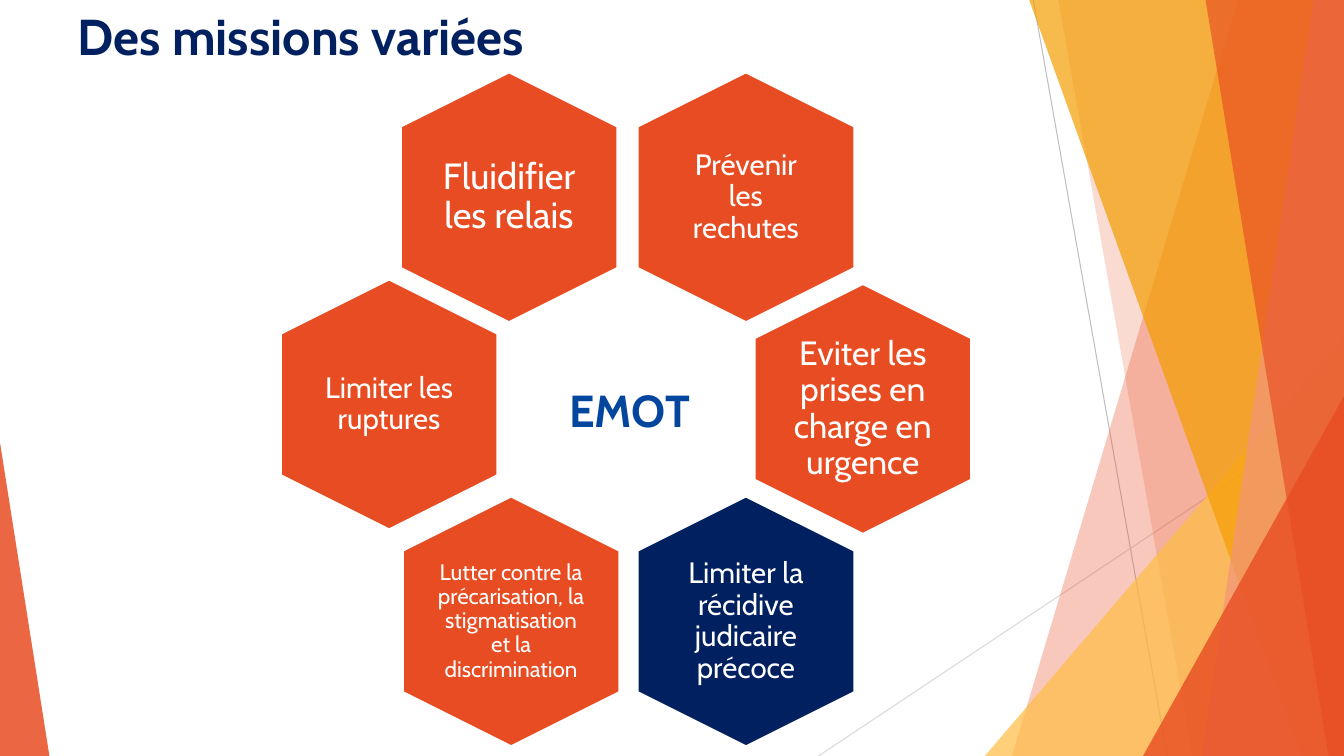
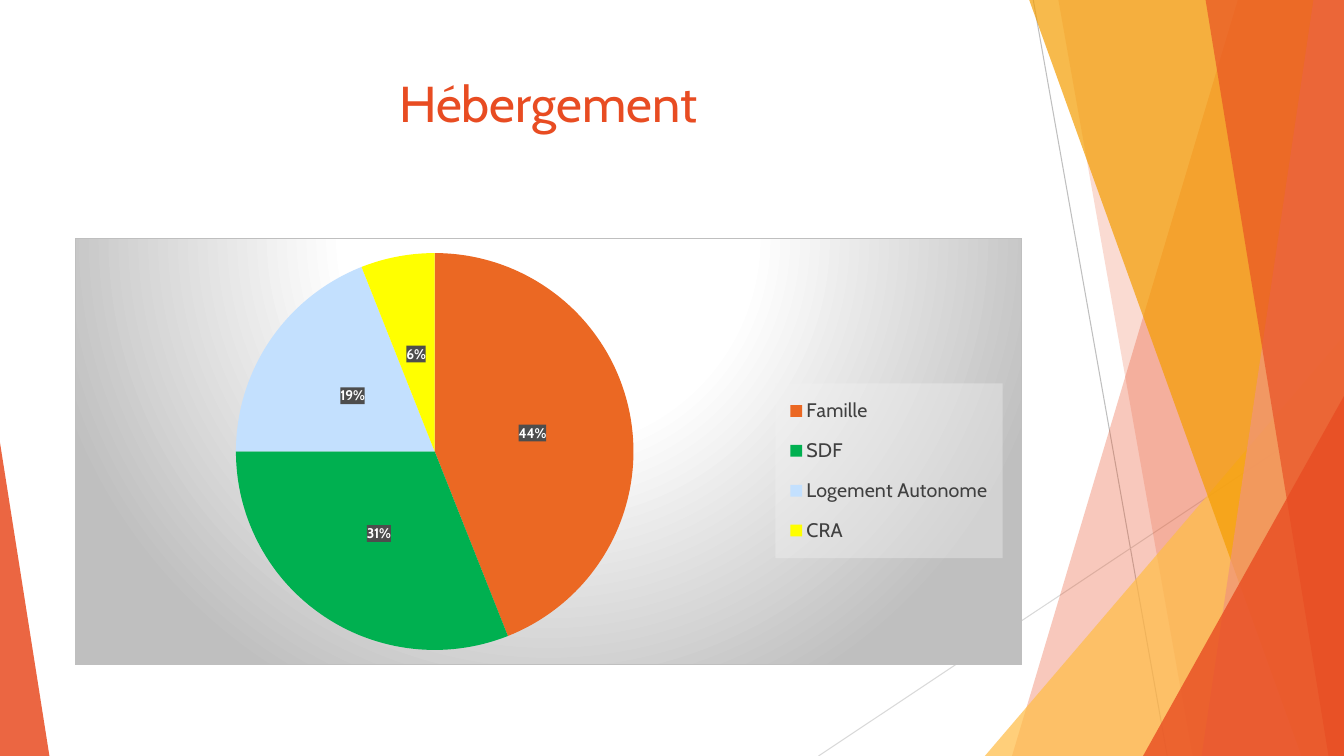
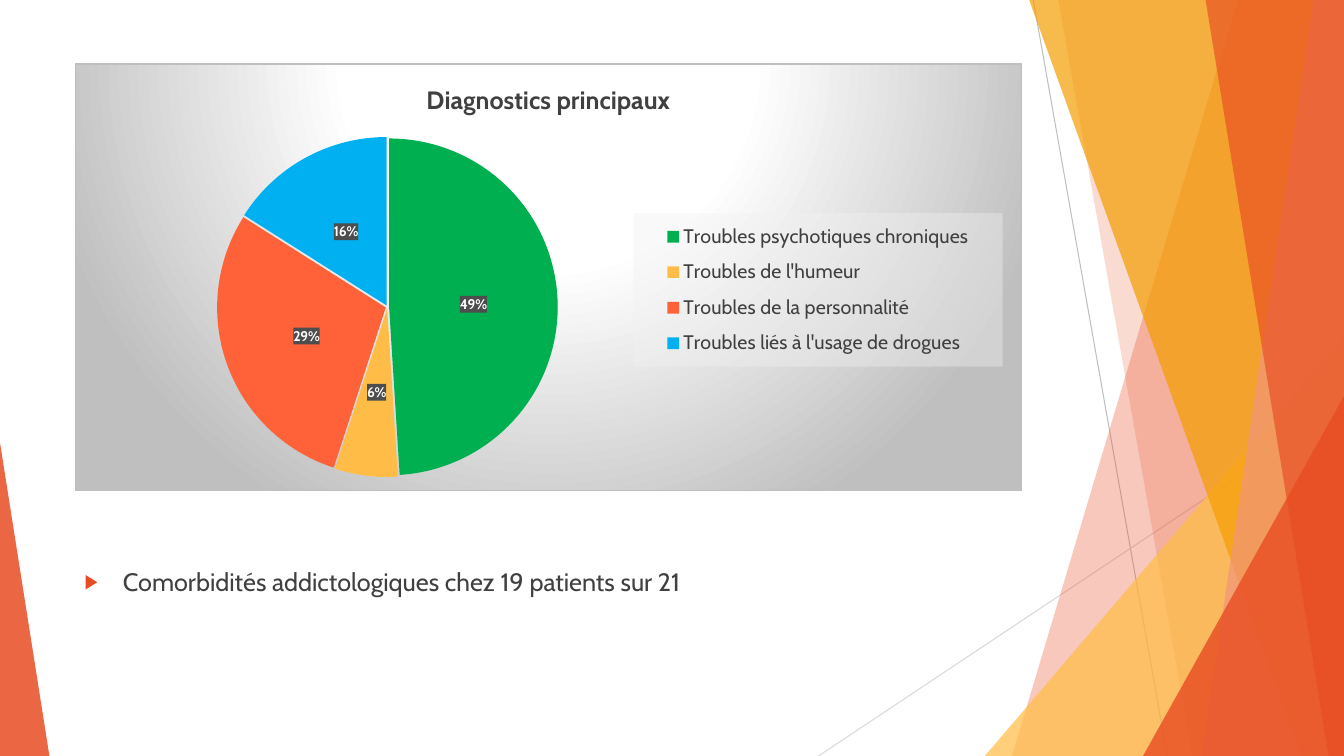
from dataclasses import dataclass

from lxml import etree
from pptx import Presentation
from pptx import util as u
from pptx.chart.data import CategoryChartData
from pptx.dml.color import RGBColor
from pptx.enum import chart as charts, shapes, text
from pptx.oxml import parse_xml
from pptx.oxml.ns import nsdecls, qn


@dataclass(frozen=True)
class Theme:
    font: str = "Cabin"
    white: str = "FFFFFF"
    black: str = "000000"
    ink: str = "404040"
    label: str = "4D4D4D"
    legend: str = "F2F2F2"
    silver: str = "BFBFBF"
    mist: str = "D9D9D9"
    orange: str = "E84C22"
    salmon: str = "F1947A"
    amber: str = "F49D00"
    gold: str = "FFBD47"
    navy: str = "002060"
    blue: str = "04459E"
    title_size: int = 36
    hub_size: int = 32
    body_size: int = 18
    legend_size: int = 14
    label_size: int = 10


THEME = Theme()
WIDTH, HEIGHT = u.Inches(13.33), u.Inches(7.5)
# Content column, on a grid of 100 columns by 100 rows
LEFT, SPAN = 5.55, 70.5


# Grid and formatting helpers
def column(count):
    return round(WIDTH * count / 100)


def row(count):
    return round(HEIGHT * count / 100)


def box(left, top, width, height):
    return column(left), row(top), column(width), row(height)


def centred_box(x, y, width, height):
    return box(x - width / 2, y - height / 2, width, height)


def rgb(value):
    return RGBColor.from_string(value)


def style_font(font, size, color, bold=False):
    font.name, font.size, font.bold = THEME.font, u.Pt(size), bold
    font.color.rgb = rgb(color)


def fill_shape(shape, color, opacity=100):
    shape.shadow.inherit = False
    shape.line.fill.background()
    shape.fill.solid()
    shape.fill.fore_color.rgb = rgb(color)
    if opacity < 100:
        color_node = shape.fill._xPr.find(".//" + qn("a:srgbClr"))
        etree.SubElement(color_node, qn("a:alpha"), val=str(opacity * 1000))


def write_text(shape, wording, size, color, bold=False, align=text.PP_ALIGN.LEFT,
               anchor=text.MSO_ANCHOR.TOP):
    frame = shape.text_frame
    frame.word_wrap = True
    frame.auto_size = text.MSO_AUTO_SIZE.NONE
    frame.vertical_anchor = anchor
    frame.text = wording
    paragraph = frame.paragraphs[0]
    paragraph.alignment = align
    style_font(paragraph.font, size, color, bold)
    return paragraph


def place(shape, left, top, width, height):
    shape.left, shape.top, shape.width, shape.height = box(left, top, width, height)


def add_title(slide, wording, left, top, color, **style):
    place(slide.shapes.title, left, top, SPAN, 19.2)
    write_text(slide.shapes.title, wording, THEME.title_size, color, **style)


# Decoration shared by all slides
def add_hairline(slide, start, end, color):
    line = slide.shapes.add_connector(
        shapes.MSO_CONNECTOR.STRAIGHT,
        column(start[0]), row(start[1]), column(end[0]), row(end[1]))
    line.line.color.rgb = rgb(color)
    line.line.width = u.Pt(0.75)
    etree.SubElement(line._element.spPr, qn("a:effectLst"))


def add_slab(slide, top_x, bottom_x, color, opacity):
    """Full-height band with a slanted left edge and the slide's right edge."""
    builder = slide.shapes.build_freeform(column(top_x), 0, scale=1.0)
    builder.add_line_segments(
        [(WIDTH, 0), (WIDTH, HEIGHT), (column(bottom_x), HEIGHT)], close=True)
    fill_shape(builder.convert_to_shape(), color, opacity)


def add_corner(slide, left, right, top, peak, color, opacity):
    """Triangle standing on the slide's bottom edge."""
    shape = slide.shapes.add_shape(
        shapes.MSO_SHAPE.ISOSCELES_TRIANGLE, *box(left, top, right - left, 100 - top))
    shape.adjustments[0] = peak
    fill_shape(shape, color, opacity)


def decorate_master(presentation, slide):
    add_hairline(slide, (76.88, 0), (86.85, 100), THEME.silver)
    add_hairline(slide, (100, 53.73), (60.9, 100), THEME.mist)
    add_slab(slide, 92.1, 75.3, THEME.orange, 30)
    add_slab(slide, 78.75, 88.73, THEME.orange, 20)
    add_corner(slide, 73.28, 100, 44.4, 1, THEME.gold, 72)
    add_slab(slide, 76.58, 96.83, THEME.amber, 70)
    add_slab(slide, 97.73, 89.4, THEME.salmon, 70)
    add_slab(slide, 89.7, 98.85, THEME.orange, 65)
    add_corner(slide, 85.05, 100, 52.4, 1, THEME.orange, 80)
    add_corner(slide, 0, 3.68, 58.53, 0, THEME.orange, 85)
    # The shapes are drawn on a slide, then moved to the master with fresh ids
    master_tree = presentation.slide_master.shapes._spTree
    drawn = [shape for shape in slide.shapes if not shape.is_placeholder]
    for number, shape in enumerate(drawn, start=100):
        shape._element.xpath(".//p:cNvPr")[0].set("id", str(number))
        master_tree.append(shape._element)


# Mission hexagons
def add_mission(slide, x, y, wording, size, color=THEME.orange):
    hexagon = slide.shapes.add_shape(
        shapes.MSO_SHAPE.HEXAGON, *centred_box(x, y, 18.6, 28.67))
    hexagon.rotation = 90
    fill_shape(hexagon, color)
    hexagon.line.color.rgb = rgb(THEME.white)
    hexagon.line.width = u.Pt(1.5)
    label = slide.shapes.add_textbox(*centred_box(x, y, 11.1, 22.67))
    paragraph = write_text(label, wording, size, THEME.white,
                           align=text.PP_ALIGN.CENTER, anchor=text.MSO_ANCHOR.MIDDLE)
    paragraph.line_spacing = 0.9
    frame = label.text_frame
    margin = u.Inches(0.09 if size == 21 else 0)
    frame.margin_left = frame.margin_right = margin
    frame.margin_top = frame.margin_bottom = margin


# Pie charts
def solid_properties(color, opacity=100):
    return parse_xml(
        f'<c:spPr {nsdecls("c", "a")}><a:solidFill><a:srgbClr val="{color}">'
        f'<a:alpha val="{opacity * 1000}"/></a:srgbClr></a:solidFill></c:spPr>')


def panel_properties():
    stops = "".join(f'<a:gs pos="{position}000"><a:srgbClr val="{color}"/></a:gs>'
                    for position, color in
                    ((0, THEME.white), (39, THEME.white), (100, THEME.silver)))
    return parse_xml(
        f'<c:spPr {nsdecls("c", "a")}><a:gradFill><a:gsLst>{stops}</a:gsLst>'
        '<a:path path="circle">'
        '<a:fillToRect l="50000" t="-80000" r="50000" b="180000"/></a:path></a:gradFill>'
        f'<a:ln w="9525"><a:solidFill><a:srgbClr val="{THEME.silver}"/></a:solidFill>'
        '</a:ln></c:spPr>')


def manual_layout(x, y, w, h, inner=False):
    target = '<c:layoutTarget val="inner"/>' if inner else ""
    sizes = "".join(f'<c:{name} val="{value}"/>'
                    for name, value in (("x", x), ("y", y), ("w", w), ("h", h)))
    return parse_xml(
        f'<c:layout {nsdecls("c")}><c:manualLayout>{target}<c:xMode val="edge"/>'
        f'<c:yMode val="edge"/>{sizes}</c:manualLayout></c:layout>')


def set_layout(parent, layout, index):
    for old in parent.findall(qn("c:layout")):
        parent.remove(old)
    parent.insert(index, layout)


def add_pie(slide, top, slices, pie_area, legend_area, title=None, explosion=0):
    """Slices are (category, percentage, colour); areas are shares of the chart."""
    data = CategoryChartData()
    data.categories = [category for category, _, _ in slices]
    data.add_series("Series 1", [value for _, value, _ in slices])
    chart = slide.shapes.add_chart(
        charts.XL_CHART_TYPE.PIE, *box(LEFT, top, SPAN, 56.53), data).chart
    style_font(chart.font, THEME.label_size, THEME.black)
    chart._chartSpace.find(qn("c:chart")).addnext(panel_properties())

    chart.has_title = title is not None
    if title:
        chart.chart_title.text_frame.text = title
        heading = chart.chart_title.text_frame.paragraphs[0]
        style_font(heading.font, THEME.body_size, THEME.ink, bold=True)

    plot = chart.plots[0]
    plot.vary_by_categories = True
    series = plot.series[0]
    for index, (_, _, color) in enumerate(slices):
        fill = series.points[index].format.fill
        fill.solid()
        fill.fore_color.rgb = rgb(color)
    if explosion:
        node = parse_xml(f'<c:explosion {nsdecls("c")} val="{explosion}"/>')
        series._element.find(qn("c:dPt")).addprevious(node)

    labels = series.data_labels
    labels.show_value, labels.show_percentage = False, True
    labels.number_format, labels.number_format_is_linked = "0%", False
    labels.position = charts.XL_LABEL_POSITION.CENTER
    style_font(labels.font, THEME.label_size, THEME.white, bold=True)
    labels._element.find(qn("c:txPr")).addprevious(solid_properties(THEME.label))

    chart.has_legend = True
    legend = chart.legend
    legend.position = charts.XL_LEGEND_POSITION.RIGHT
    legend.include_in_layout = False
    style_font(legend.font, THEME.legend_size, THEME.ink)
    legend._element.find(qn("c:txPr")).addprevious(solid_properties(THEME.legend, 39))
    set_layout(legend._element, manual_layout(*legend_area), 1)
    set_layout(plot._element.getparent(), manual_layout(*pie_area, inner=True), 0)


def add_bullet(paragraph):
    paragraph.space_before = u.Pt(10)
    properties = paragraph._p.get_or_add_pPr()
    indent = u.Inches(0.38)
    properties.set("marL", str(indent))
    properties.set("indent", str(-indent))
    namespace = nsdecls("a")
    for markup in (
            f'<a:buClr {namespace}><a:srgbClr val="{THEME.orange}"/></a:buClr>',
            f'<a:buSzPct {namespace} val="80000"/>',
            f'<a:buChar {namespace} char="▶"/>'):
        properties.find(qn("a:defRPr")).addprevious(parse_xml(markup))


# Slides
def build_missions(slide):
    add_title(slide, "Des missions variées", 5.03, 0, THEME.navy, bold=True)
    add_mission(slide, 55.5, 26.1, "Prévenir les rechutes", 21)
    add_mission(slide, 37.88, 26.1, "Fluidifier les relais", 26)
    add_mission(slide, 28.95, 53.5, "Limiter les ruptures", 21)
    add_mission(slide, 64.2, 54.1, "Eviter les prises en charge en urgence", 24)
    add_mission(slide, 55.5, 82.2, "Limiter la récidive judicaire précoce", 21, THEME.navy)
    add_mission(slide, 38.03, 82.2, "Lutter contre la précarisation, la stigmatisation "
                "et la discrimination", 16)
    hub = slide.shapes.add_textbox(*box(40.88, 50, 11.93, 8.53))
    write_text(hub, "EMOT", THEME.hub_size, THEME.blue, bold=True,
               align=text.PP_ALIGN.CENTER)


def build_housing(slide):
    add_title(slide, "Hébergement", LEFT, 8.93, THEME.orange, align=text.PP_ALIGN.CENTER)
    add_pie(slide, 31.47,
            [("Famille", 44, "EB6823"), ("SDF", 31, "00B050"),
             ("Logement Autonome", 19, "C3E0FE"), ("CRA", 6, "FFFF00")],
            pie_area=(0.17, 0.03, 0.42, 0.94), legend_area=(0.74, 0.34, 0.24, 0.41))


def build_diagnoses(slide):
    title, body = slide.placeholders
    title._element.getparent().remove(title._element)
    place(body, LEFT, 74.27, SPAN, 13.87)
    add_bullet(write_text(body, "Comorbidités addictologiques chez 19 patients sur 21",
                          THEME.body_size, THEME.ink))
    add_pie(slide, 8.4,
            [("Troubles psychotiques chroniques", 49, "00B050"),
             ("Troubles de l'humeur", 6, THEME.gold),
             ("Troubles de la personnalité", 29, "FF6238"),
             ("Troubles liés à l'usage de drogues", 16, "00B0F0")],
            pie_area=(0.15, 0.17, 0.36, 0.8), legend_area=(0.59, 0.35, 0.39, 0.36),
            title="Diagnostics principaux", explosion=1)


def main():
    presentation = Presentation()
    presentation.slide_width, presentation.slide_height = WIDTH, HEIGHT
    title_and_content, title_only = (presentation.slide_layouts[i] for i in (1, 5))
    missions = presentation.slides.add_slide(title_only)
    decorate_master(presentation, missions)
    build_missions(missions)
    build_housing(presentation.slides.add_slide(title_only))
    build_diagnoses(presentation.slides.add_slide(title_and_content))
    presentation.save("out.pptx")


if __name__ == "__main__":
    main()
